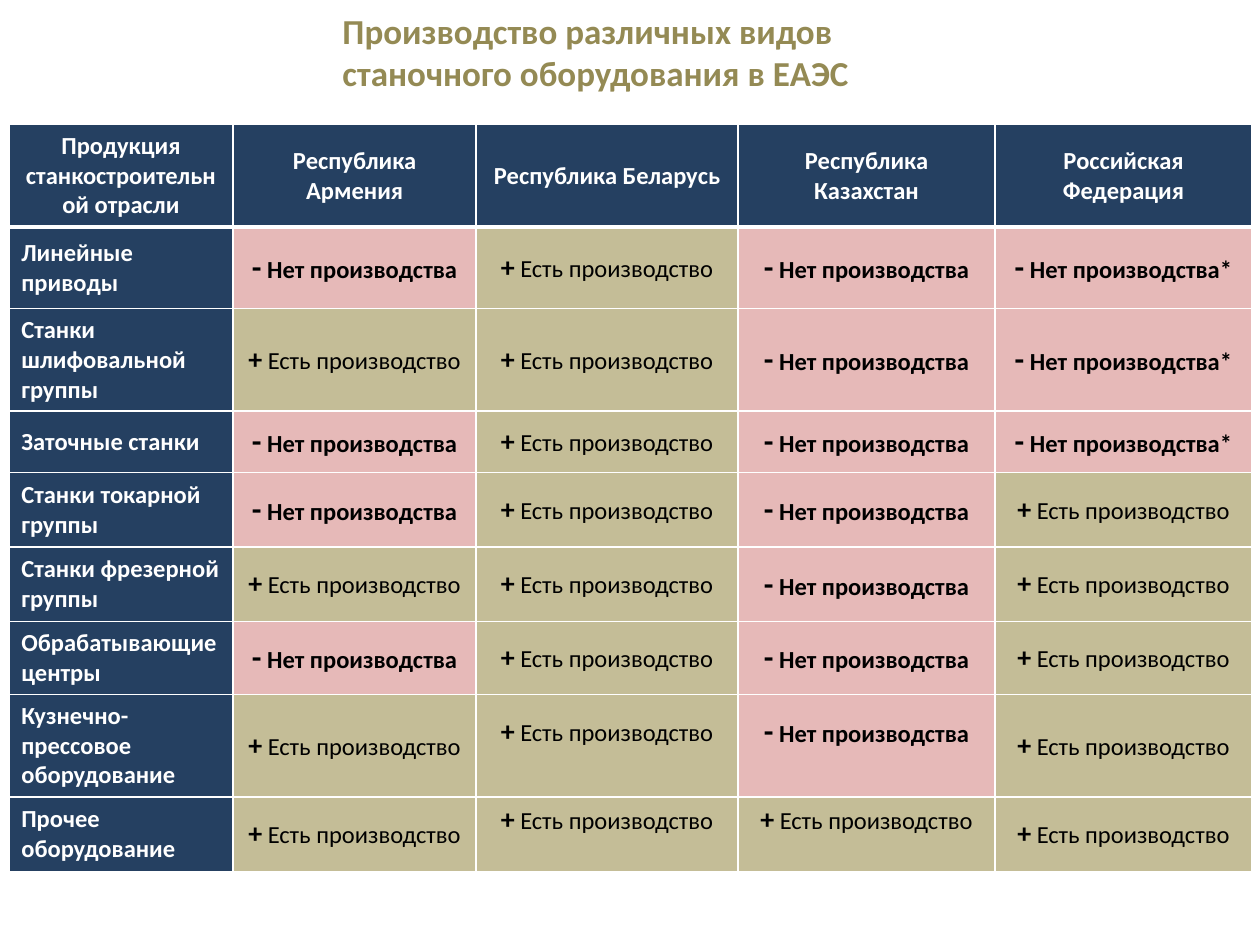
from dataclasses import dataclass

from lxml import etree
from pptx import Presentation
from pptx import util as u
from pptx.dml.color import RGBColor
from pptx.enum import text
from pptx.oxml.ns import qn

FONT = "Calibri"
NAVY, GOLD, WHITE, BLACK = "254061", "948A54", "FFFFFF", "000000"
HEADERS = ["Продукция станкостроительной отрасли", "Республика Армения",
           "Республика Беларусь", "Республика Казахстан", "Российская Федерация"]
COL_WIDTHS = [4.52, 4.9, 5.28, 5.18, 5.18]
HEADER_HEIGHT = 1.73
MARGIN_Y, RAISED_MARGIN = 0.13, 0.69


@dataclass
class Status:
    sign: str
    sign_size: int
    label: str
    bold: bool
    fill: str


@dataclass
class Product:
    name: str
    height: float
    marks: str  # one status key per country
    raised: tuple = ()  # columns whose text sits above the middle


STATUSES = {
    "+": Status("+", 16, " Есть производство", False, "C4BD97"),
    "-": Status("-", 18, " Нет производства", True, "E6B9B8"),
    "*": Status("-", 18, " Нет производства*", True, "E6B9B8"),
}
PRODUCTS = [
    Product("Линейные приводы", 1.65, "-+-*"),
    Product("Станки шлифовальной группы", 1.83, "++-*"),
    Product("Заточные станки", 1.24, "-+-*"),
    Product("Станки токарной группы", 1.5, "-+-+"),
    Product("Станки фрезерной группы", 1.5, "++-+"),
    Product("Обрабатывающие центры", 1.47, "-+-+"),
    Product("Кузнечно-прессовое оборудование", 1.65, "++-+", (2, 3)),
    Product("Прочее оборудование", 1.45, "++++", (2, 3)),
]


def rgb(value: str) -> RGBColor:
    return RGBColor.from_string(value)


def set_font(font, size: int, color: str, bold: bool = True) -> None:
    for name, value in {"name": FONT, "size": u.Pt(size), "bold": bold}.items():
        setattr(font, name, value)
    font.color.rgb = rgb(color)


def add_run(p, words: str, size: int, color: str, bold: bool = True) -> None:
    r = p.add_run()
    r.text = words
    set_font(r.font, size, color, bold)


def set_borders(cell, top: int = 1, bottom: int = 1) -> None:
    tc_pr = cell._tc.get_or_add_tcPr()
    for side, width in {"L": 1, "R": 1, "T": top, "B": bottom}.items():
        ln = etree.SubElement(tc_pr, qn(f"a:ln{side}"), w=str(u.Pt(width)))
        fill = etree.SubElement(ln, qn("a:solidFill"))
        etree.SubElement(fill, qn("a:srgbClr"), val=WHITE)


def format_cell(cell, fill: str, centred: bool = True, top: int = 1,
                bottom: int = 1, margin_bottom: float = MARGIN_Y):
    """Style one cell and return its paragraph."""
    set_borders(cell, top, bottom)
    cell.fill.solid()
    cell.fill.fore_color.rgb = rgb(fill)
    layout = {"vertical_anchor": text.MSO_ANCHOR.MIDDLE,
              "margin_left": u.Cm(0.25), "margin_right": u.Cm(0.25),
              "margin_top": u.Cm(MARGIN_Y), "margin_bottom": u.Cm(margin_bottom)}
    for name, value in layout.items():
        setattr(cell, name, value)
    p = cell.text_frame.paragraphs[0]
    p.alignment = text.PP_ALIGN.CENTER if centred else text.PP_ALIGN.LEFT
    return p


def add_title(s) -> None:
    sp = s.shapes.title
    box = {"left": 6.65, "top": 0, "width": 20.73, "height": 2.08}
    for name, value in box.items():
        setattr(sp, name, u.Cm(value))
    tf = sp.text_frame
    tf.vertical_anchor = text.MSO_ANCHOR.MIDDLE
    tf.text = "Производство различных видов\vстаночного оборудования в ЕАЭС"
    p = tf.paragraphs[0]
    p.alignment = text.PP_ALIGN.LEFT
    for r in p.runs:
        set_font(r.font, 20, GOLD)


def add_production_table(s) -> None:
    heights = [HEADER_HEIGHT] + [product.height for product in PRODUCTS]
    table = s.shapes.add_table(
        len(heights), len(COL_WIDTHS), u.Cm(0.18), u.Cm(2.51),
        u.Cm(sum(COL_WIDTHS)), u.Cm(sum(heights))).table
    table.horz_banding = False
    for column, width in zip(table.columns, COL_WIDTHS):
        column.width = u.Cm(width)
    for row, height in zip(table.rows, heights):
        row.height = u.Cm(height)

    # Header row
    for col, words in enumerate(HEADERS):
        p = format_cell(table.cell(0, col), NAVY, bottom=3)
        add_run(p, words, 14, WHITE)

    # Product rows
    for row, product in enumerate(PRODUCTS, 1):
        top = 3 if row == 1 else 1
        p = format_cell(table.cell(row, 0), NAVY, centred=False, top=top)
        add_run(p, product.name, 14, WHITE)
        for col, mark in enumerate(product.marks, 1):
            status = STATUSES[mark]
            margin = RAISED_MARGIN if col in product.raised else MARGIN_Y
            p = format_cell(table.cell(row, col), status.fill, top=top,
                            margin_bottom=margin)
            add_run(p, status.sign, status.sign_size, BLACK)
            add_run(p, status.label, 14, BLACK, status.bold)


def main() -> None:
    prs = Presentation()
    prs.slide_width, prs.slide_height = u.Cm(25.4), u.Cm(19.05)
    s = prs.slides.add_slide(prs.slide_layouts[5])
    add_title(s)
    add_production_table(s)
    prs.save("out.pptx")


if __name__ == "__main__":
    main()
